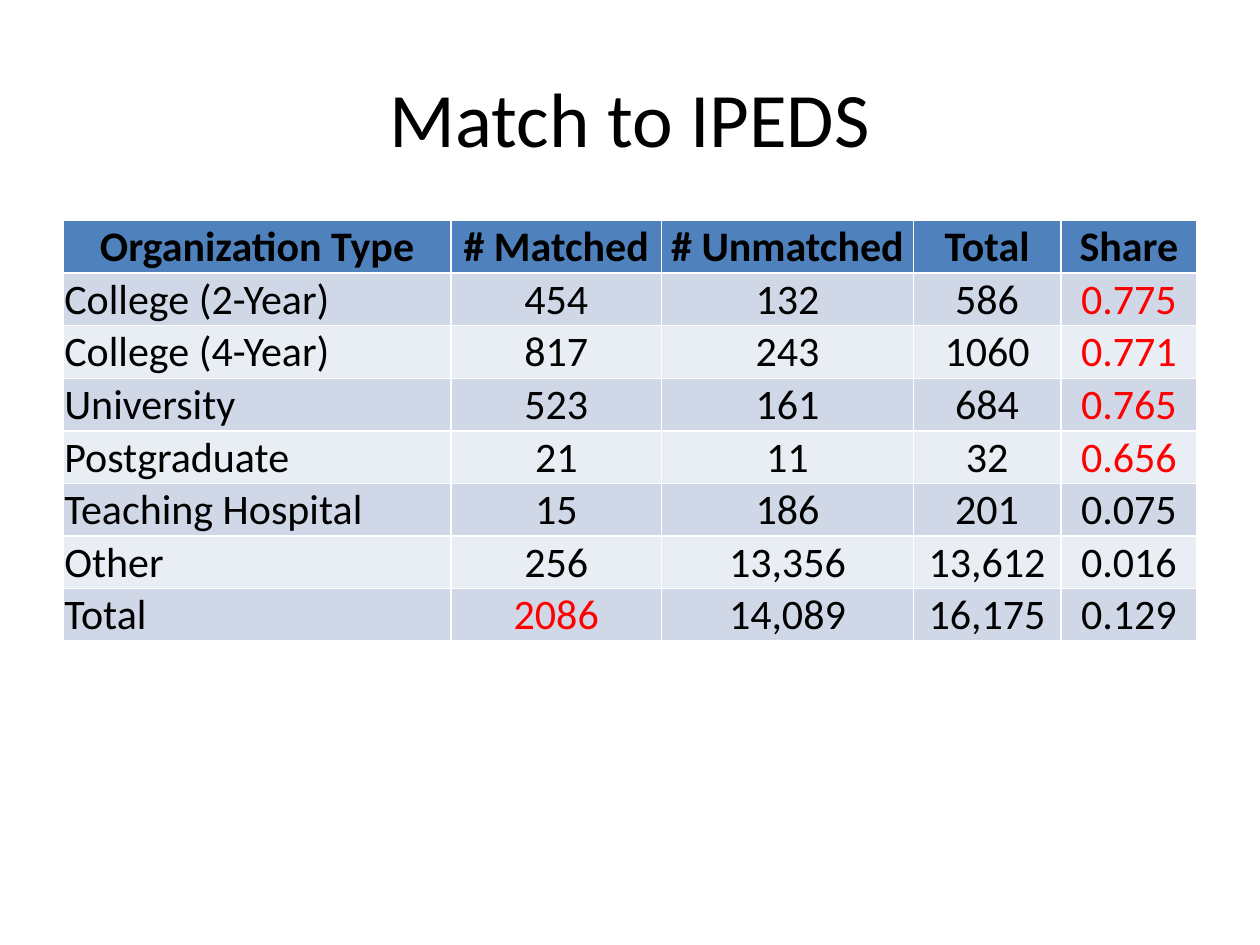
from pptx import Presentation
from pptx.dml.color import RGBColor
from pptx.enum import text as t
from pptx.util import Pt

BLACK = RGBColor(0, 0, 0)
RED = RGBColor(255, 0, 0)
BLUE = RGBColor(0x4F, 0x81, 0xBD)
BANDS = RGBColor(0xE9, 0xED, 0xF4), RGBColor(0xD0, 0xD8, 0xE8)

ROWS = [
    ("Organization Type", "# Matched", "# Unmatched", "Total", "Share"),
    ("College (2-Year)", "454", "132", "586", "0.775"),
    ("College (4-Year)", "817", "243", "1060", "0.771"),
    ("University", "523", "161", "684", "0.765"),
    ("Postgraduate", "21", "11", "32", "0.656"),
    ("Teaching Hospital", "15", "186", "201", "0.075"),
    ("Other", "256", "13,356", "13,612", "0.016"),
    ("Total", "2086", "14,089", "16,175", "0.129"),
]
WIDTHS = 221.76, 120.24, 144, 84.24, 77.76
HOT = {(1, 4), (2, 4), (3, 4), (4, 4), (7, 1)}


def put(obj, **vals):
    """Set each named value on the object."""
    for name, val in vals.items():
        setattr(obj, name, val)


def style(para, size, color, bold, align):
    """Format one paragraph and its first run."""
    para.alignment = align
    font = para.runs[0].font
    put(font, name="Calibri", size=Pt(size), bold=bold)
    font.color.rgb = color


def add_title(slide, words, x, y, w, h):
    """Fill and place the title placeholder."""
    head = slide.shapes.title
    put(head, left=Pt(x), top=Pt(y), width=Pt(w), height=Pt(h))
    put(head.text_frame, text=words, vertical_anchor=t.MSO_ANCHOR.MIDDLE)
    style(head.text_frame.paragraphs[0], 44, BLACK, False, t.PP_ALIGN.CENTER)


def fill_cell(cell, words, row, col):
    """Write and format one cell by its place in the table."""
    low = row and (col == 4 or ROWS[row][0] == "Other")
    anchor = t.MSO_ANCHOR.BOTTOM if low else t.MSO_ANCHOR.MIDDLE
    put(cell, text=words, vertical_anchor=anchor, margin_left=Pt(0.75),
        margin_right=Pt(0.75), margin_top=Pt(0.75), margin_bottom=0)
    cell.fill.solid()
    cell.fill.fore_color.rgb = BANDS[row % 2] if row else BLUE
    align = t.PP_ALIGN.LEFT if row and not col else t.PP_ALIGN.CENTER
    color = RED if (row, col) in HOT else BLACK
    style(cell.text_frame.paragraphs[0], 24, color, row == 0, align)


def add_match(slide, x, y, w, h):
    """Build the table of matches by organization type."""
    grid = slide.shapes.add_table(
        len(ROWS), len(WIDTHS), Pt(x), Pt(y), Pt(w), Pt(h)).table
    for col, wide in zip(grid.columns, WIDTHS):
        col.width = Pt(w * wide / sum(WIDTHS))
    for r, row in enumerate(ROWS):
        grid.rows[r].height = Pt(h / len(ROWS))
        for c, words in enumerate(row):
            fill_cell(grid.cell(r, c), words, r, c)


def main():
    """Build the slide and save it."""
    deck = Presentation()
    put(deck, slide_width=Pt(720), slide_height=Pt(540))
    slide = deck.slides.add_slide(deck.slide_layouts[5])
    add_title(slide, "Match to IPEDS", 36, 21.6, 648, 90)
    add_match(slide, 36, 126, 648, 236.16)
    deck.save("out.pptx")


if __name__ == "__main__":
    main()
